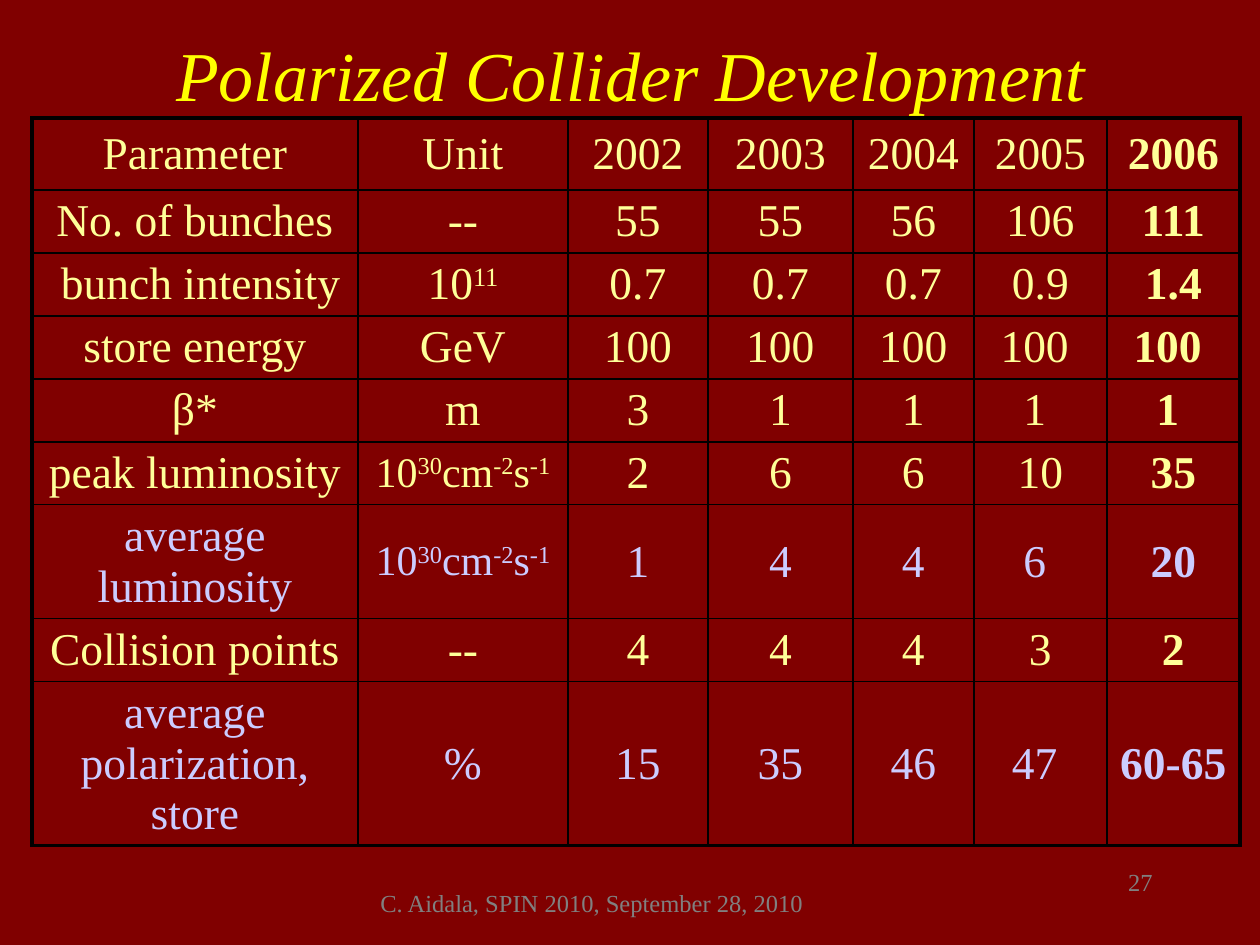
from dataclasses import dataclass

from lxml import etree
from pptx import Presentation
from pptx.dml.color import RGBColor
from pptx.enum.text import MSO_ANCHOR, PP_ALIGN
from pptx.oxml.ns import qn
from pptx.util import Pt

EMU_PER_PX = 914400 // 126
MIDDLE = MSO_ANCHOR.MIDDLE
LEFT, CENTER, RIGHT = PP_ALIGN.LEFT, PP_ALIGN.CENTER, PP_ALIGN.RIGHT
TITLE_ONLY = 5


@dataclass(frozen=True)
class Theme:
    font: str = "Times New Roman"
    background: str = "800000"
    title: str = "FFFF00"
    body: str = "FFFF99"
    highlight: str = "CCCCFF"
    footer: str = "808080"
    border: str = "000000"
    title_size: int = 40
    body_size: int = 26
    unit_size: int = 24
    footer_size: int = 14
    outer_line: float = 2.25
    inner_line: float = 1


THEME = Theme()

COLUMN_WIDTHS = [326, 210, 140, 145, 121, 133, 133]
ROW_HEIGHTS = [72, 63, 63, 63, 63, 63, 114, 63, 164]
HIGHLIGHTED_ROWS = (6, 8)
# In the unit column, every second part between bars is a superscript.
LUMINOSITY_UNIT = "10|30|cm|-2|s|-1"
ROWS = [
    ["Parameter", "Unit", "2002", "2003", "2004", "2005", "2006"],
    ["No. of bunches", "--", "55", "55", "56", "106", "111"],
    [" bunch intensity", "10|11", "0.7", "0.7", "0.7", "0.9", "1.4"],
    ["store energy", "GeV", "100", "100", "100", "100 ", "100 "],
    ["β*", "m", "3", "1", "1", "1 ", "1 "],
    ["peak luminosity", LUMINOSITY_UNIT, "2", "6", "6", "10", "35"],
    ["average luminosity", LUMINOSITY_UNIT, "1", "4", "4", "6 ", "20"],
    ["Collision points", "--", "4", "4", "4", "3", "2"],
    ["average polarization, store", "%", "15", "35", "46", "47 ", "60-65"],
]


def px(length):
    return length * EMU_PER_PX


def format_run(run, size, color, bold=False, italic=False):
    font = run.font
    font.name = THEME.font
    font.size = Pt(size)
    font.bold = bold
    font.italic = italic
    font.color.rgb = RGBColor.from_string(color)


def add_title(slide, text, box):
    title = slide.shapes.title
    title.left, title.top, title.width, title.height = map(px, box)
    frame = title.text_frame
    frame.text = text
    frame.vertical_anchor = MIDDLE
    paragraph = frame.paragraphs[0]
    paragraph.alignment = CENTER
    format_run(paragraph.runs[0], THEME.title_size, THEME.title, italic=True)


def add_footer_text(slide, text, box, alignment):
    frame = slide.shapes.add_textbox(*map(px, box)).text_frame
    frame.word_wrap = True
    frame.text = text
    paragraph = frame.paragraphs[0]
    paragraph.alignment = alignment
    format_run(paragraph.runs[0], THEME.footer_size, THEME.footer)


def set_borders(cell, outer_sides):
    """Draw all four borders, heavier on the sides at the table's edge."""
    properties = cell._tc.get_or_add_tcPr()
    for position, side in enumerate("LRTB"):
        width = THEME.outer_line if side in outer_sides else THEME.inner_line
        line = etree.Element(qn(f"a:ln{side}"), w=str(Pt(width)))
        fill = etree.SubElement(line, qn("a:solidFill"))
        etree.SubElement(fill, qn("a:srgbClr"), val=THEME.border)
        properties.insert(position, line)


def fill_cell(cell, text, color, bold):
    cell.fill.background()
    cell.vertical_anchor = MIDDLE
    # The row heights already hold the space above and below the text.
    cell.margin_top = cell.margin_bottom = 0
    paragraph = cell.text_frame.paragraphs[0]
    paragraph.alignment = CENTER
    size = THEME.unit_size if text == LUMINOSITY_UNIT else THEME.body_size
    for index, part in enumerate(text.split("|")):
        run = paragraph.add_run()
        run.text = part
        format_run(run, size, color, bold)
        if index % 2:
            run._r.get_or_add_rPr().set("baseline", "30000")


def add_parameter_table(slide, left, top):
    last_row, last_column = len(ROWS) - 1, len(COLUMN_WIDTHS) - 1
    box = (left, top, sum(COLUMN_WIDTHS), sum(ROW_HEIGHTS))
    table = slide.shapes.add_table(
        len(ROWS), len(COLUMN_WIDTHS), *map(px, box)).table
    table.first_row = False
    table.horz_banding = False
    for column, width in zip(table.columns, COLUMN_WIDTHS):
        column.width = px(width)
    for row, height in zip(table.rows, ROW_HEIGHTS):
        row.height = px(height)

    for row_index, values in enumerate(ROWS):
        highlighted = row_index in HIGHLIGHTED_ROWS
        color = THEME.highlight if highlighted else THEME.body
        for column_index, text in enumerate(values):
            cell = table.cell(row_index, column_index)
            fill_cell(cell, text, color, bold=column_index == last_column)
            edges = {"L": column_index == 0, "R": column_index == last_column,
                     "T": row_index == 0, "B": row_index == last_row}
            set_borders(cell, [side for side in edges if edges[side]])


def main():
    presentation = Presentation()
    presentation.slide_width = px(1260)
    presentation.slide_height = px(945)
    slide = presentation.slides.add_slide(
        presentation.slide_layouts[TITLE_ONLY])
    background = slide.background.fill
    background.solid()
    background.fore_color.rgb = RGBColor.from_string(THEME.background)

    add_footer_text(slide, "C. Aidala, SPIN 2010, September 28, 2010",
                    (368, 882, 525, 44), LEFT)
    add_footer_text(slide, "27", (903, 861, 262, 63), RIGHT)
    add_title(slide, "Polarized Collider Development", (32, 32, 1197, 84))
    add_parameter_table(slide, 32, 118)
    presentation.save("out.pptx")


if __name__ == "__main__":
    main()
